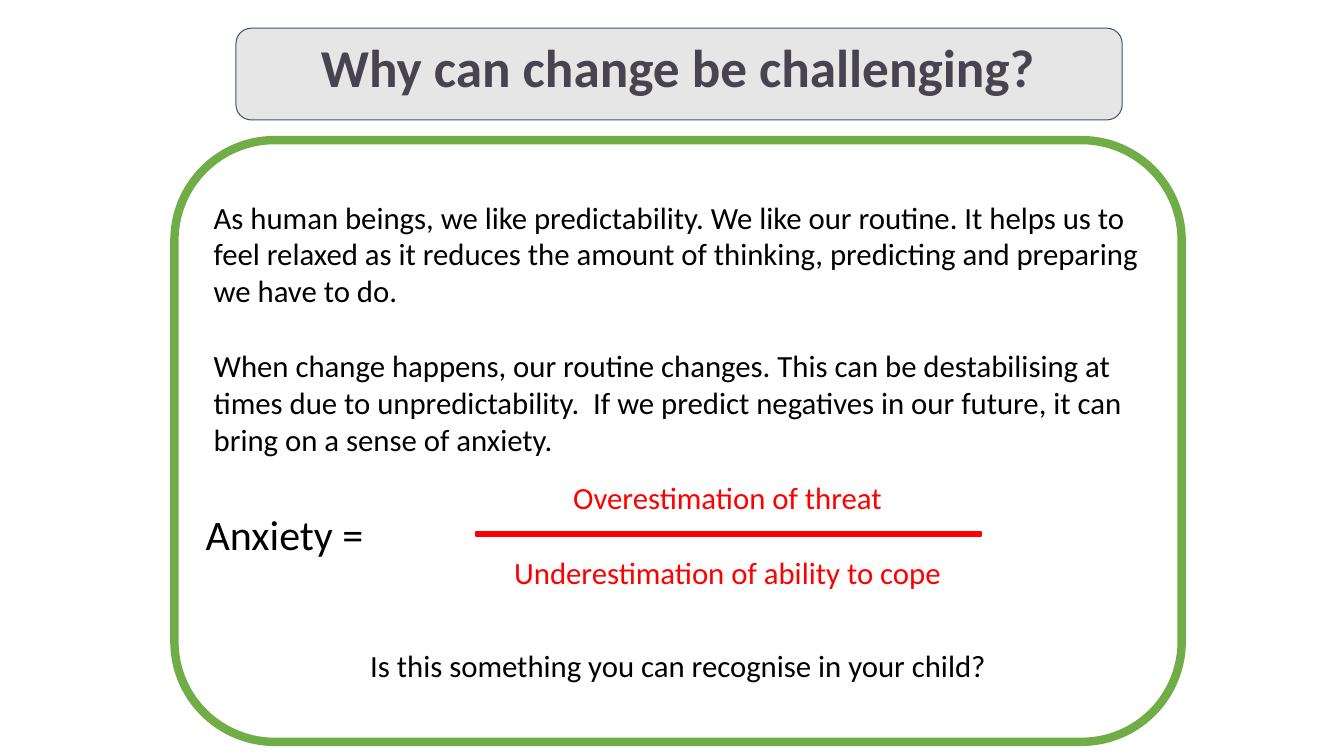
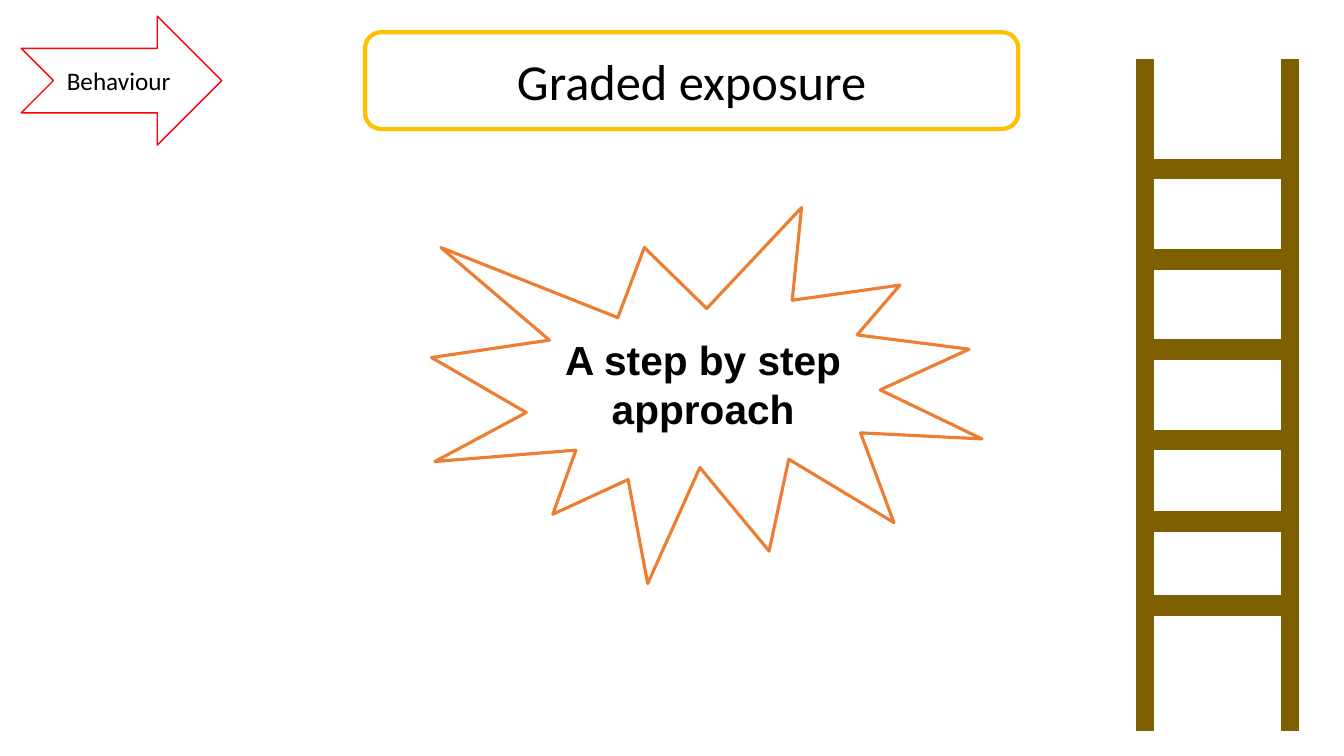
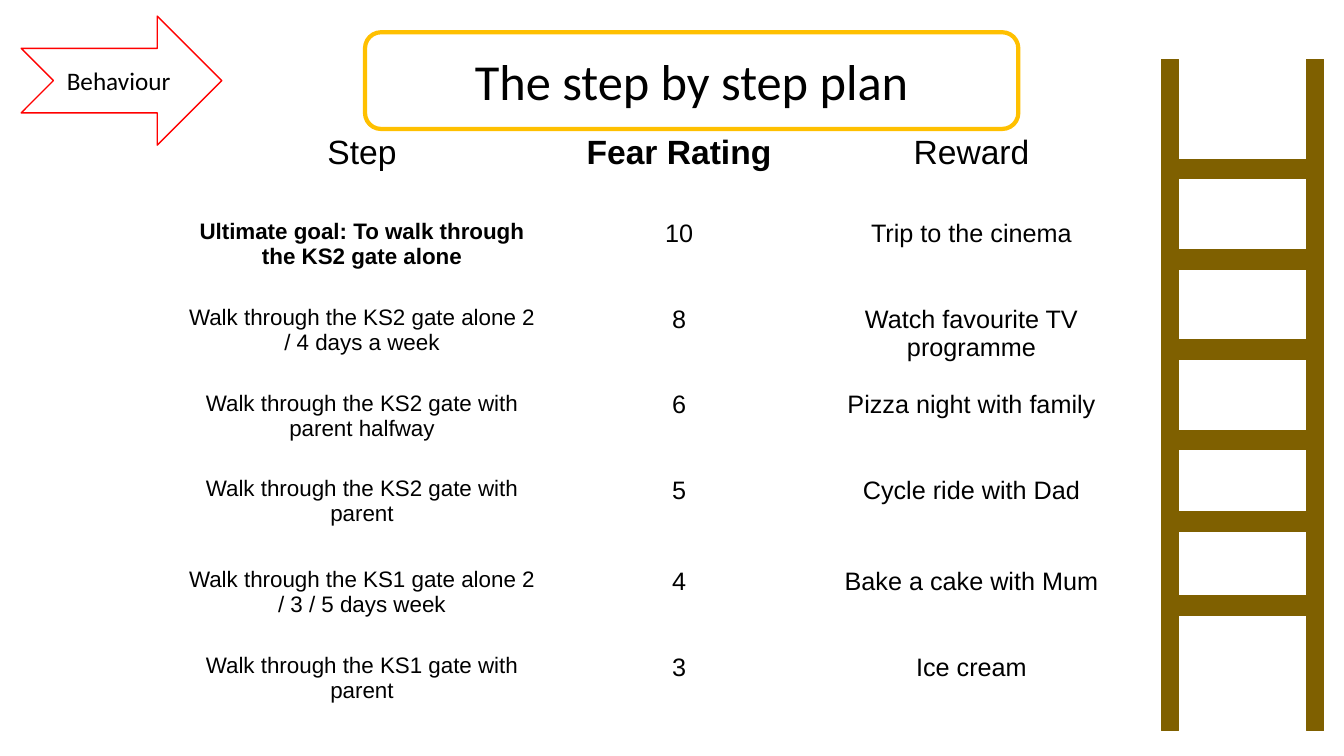
from dataclasses import dataclass
from typing import Optional

from pptx import Presentation
from pptx.dml.color import RGBColor
from pptx.enum.shapes import MSO_SHAPE
from pptx.enum.text import MSO_ANCHOR, MSO_AUTO_SIZE, PP_ALIGN
from pptx.util import Emu, Pt

PX = 9144
TITLE_ONLY = 5
BLACK, WHITE, RED = "000000", "FFFFFF", "FF0000"
SLATE, GREY, NAVY = "47434F", "E7E6E6", "44546A"
GREEN, AMBER, ORANGE, WOOD = "70AD47", "FFC000", "ED7D31", "7F6000"
BODY_FONT, PLAN_FONT = "Calibri", "Arial"
LINE_GAP = 27


@dataclass(frozen=True)
class Box:
    """A position and size in px."""
    left: int
    top: int
    width: int
    height: int

    def emu(self) -> tuple:
        """Return left, top, width and height in EMU."""
        return tuple(Emu(n * PX) for n in (self.left, self.top, self.width, self.height))


@dataclass(frozen=True)
class Style:
    """The look of a paragraph."""
    size: int
    font: str = BODY_FONT
    color: str = BLACK
    bold: bool = False
    align: PP_ALIGN = PP_ALIGN.CENTER
    spacing: Optional[float] = None


@dataclass(frozen=True)
class Para:
    """A paragraph with its style and the points of space before it."""
    text: str
    style: Style
    before: int = 0


@dataclass(frozen=True)
class Step:
    """One row of the plan."""
    step: str
    fear: str
    reward: str


TITLE_FRAME = Box(362, 32, 648, 96)
TITLE = Style(36)
QUESTION_TITLE = Style(38, color=SLATE, bold=True, spacing=0.9)
PROSE = Style(22, align=PP_ALIGN.LEFT)
PROMPT = Style(22)
FRACTION = Style(22, color=RED)

HEADINGS = Step("Step", "Fear Rating", "Reward")
STEPS = [
    Step("Ultimate goal: To walk through the KS2 gate alone", "10", "Trip to the cinema"),
    Step("Walk through the KS2 gate alone 2 / 4 days a week", "8", "Watch favourite TV programme"),
    Step("Walk through the KS2 gate with parent halfway", "6", "Pizza night with family"),
    Step("Walk through the KS2 gate with parent", "5", "Cycle ride with Dad"),
    Step("Walk through the KS1 gate alone 2 / 3 / 5 days week", "4", "Bake a cake with Mum"),
    Step("Walk through the KS1 gate with parent", "3", "Ice cream"),
]
COLUMN_WIDTHS = (364, 265, 315)
ROW_HEIGHTS = (85, 85, 85, 85, 90, 85, 85)
RUNG_TOPS = (158, 248, 337, 427, 508, 591)


def rgb(color: str) -> RGBColor:
    """Turn a hex string into a colour."""
    return RGBColor.from_string(color)


def write(tf, *paras: Para) -> None:
    """Write paragraphs into a text frame."""
    tf.word_wrap = True
    for i, para in enumerate(paras):
        p = tf.add_paragraph() if i else tf.paragraphs[0]
        p.alignment = para.style.align
        if para.before:
            p.space_before = Pt(para.before)
        if para.style.spacing:
            p.line_spacing = para.style.spacing
        r = p.add_run()
        r.text = para.text
        r.font.name = para.style.font
        r.font.size = Pt(para.style.size)
        r.font.bold = para.style.bold
        r.font.color.rgb = rgb(para.style.color)


def add_shape(shapes, kind: MSO_SHAPE, box: Box, fill: Optional[str], line: str, width: float):
    """Add a preset shape with its fill and outline."""
    sp = shapes.add_shape(kind, *box.emu())
    sp.shadow.inherit = False
    if fill:
        sp.fill.solid()
        sp.fill.fore_color.rgb = rgb(fill)
    else:
        sp.fill.background()
    sp.line.color.rgb = rgb(line)
    sp.line.width = Pt(width)
    sp.text_frame.vertical_anchor = MSO_ANCHOR.MIDDLE
    return sp


def add_text(s, box: Box, *paras: Para) -> None:
    """Add a wrapped text box."""
    write(s.shapes.add_textbox(*box.emu()).text_frame, *paras)


def place_title(s, box: Box, para: Para, anchor: MSO_ANCHOR) -> None:
    """Fill the title placeholder and bring it in front of its frame."""
    title = s.shapes.title
    title.left, title.top, title.width, title.height = box.emu()
    tf = title.text_frame
    tf.auto_size = MSO_AUTO_SIZE.NONE
    tf.vertical_anchor = anchor
    write(tf, para)
    s.shapes._spTree.append(title._element)


def add_behaviour_header(s, title: str) -> None:
    """Add the behaviour arrow and the framed title."""
    arrow = add_shape(s.shapes, MSO_SHAPE.NOTCHED_RIGHT_ARROW, Box(21, 16, 199, 128), WHITE, RED, 1)
    write(arrow.text_frame, Para("Behaviour ", Style(18)))
    add_shape(s.shapes, MSO_SHAPE.ROUNDED_RECTANGLE, TITLE_FRAME, WHITE, AMBER, 3)
    place_title(s, TITLE_FRAME, Para(title, TITLE), MSO_ANCHOR.MIDDLE)


def add_ladder(s, left: int) -> None:
    """Add a ladder of two rails and its rungs as one group."""
    rail, gap = 17, 127
    rails = [Box(x, 59, rail, 666) for x in (left, left + rail + gap)]
    rungs = [Box(left + rail, top, gap, 19) for top in RUNG_TOPS]
    ladder = s.shapes.add_group_shape()
    for box in rails + rungs:
        add_shape(ladder.shapes, MSO_SHAPE.RECTANGLE, box, WOOD, WOOD, 1)


def add_plan_table(s) -> None:
    """Add the table of steps, fear ratings and rewards."""
    rows = [HEADINGS, *STEPS]
    box = Box(177, 128, sum(COLUMN_WIDTHS), sum(ROW_HEIGHTS))
    table = s.shapes.add_table(len(rows), len(COLUMN_WIDTHS), *box.emu()).table
    for column, width in zip(table.columns, COLUMN_WIDTHS):
        column.width = Emu(width * PX)
    for i, (row, height) in enumerate(zip(rows, ROW_HEIGHTS)):
        table.rows[i].height = Emu(height * PX)
        for j, text in enumerate((row.step, row.fear, row.reward)):
            cell = table.cell(i, j)
            cell.fill.solid()
            cell.fill.fore_color.rgb = rgb(WHITE)
            size = 24 if i == 0 else 16 if j == 0 else 18
            bold = (i, j) in ((0, 1), (1, 0))
            write(cell.text_frame, Para(text, Style(size, PLAN_FONT, bold=bold)))


def build_question_slide(s) -> None:
    """Build the slide on why change is challenging."""
    add_shape(s.shapes, MSO_SHAPE.ROUNDED_RECTANGLE, Box(234, 28, 879, 91), GREY, NAVY, 0.75)
    place_title(s, Box(12, 36, 1321, 129), Para("Why can change be challenging?", QUESTION_TITLE),
                MSO_ANCHOR.TOP)
    panel = add_shape(s.shapes, MSO_SHAPE.ROUNDED_RECTANGLE, Box(173, 139, 999, 597), WHITE, GREEN, 6)
    write(
        panel.text_frame,
        Para("As human beings, we like predictability. We like our routine. It helps us to feel "
             "relaxed as it reduces the amount of thinking, predicting and preparing we have to do.",
             PROSE),
        Para("When change happens, our routine changes. This can be destabilising at times due to "
             "unpredictability.  If we predict negatives in our future, it can bring on a sense of "
             "anxiety.", PROSE, LINE_GAP),
        Para("Is this something you can recognise in your child?", PROMPT, 5 * LINE_GAP),
    )
    add_text(s, Box(452, 470, 539, 121),
             Para("Overestimation of threat", FRACTION),
             Para("Underestimation of ability to cope", FRACTION, LINE_GAP))
    add_shape(s.shapes, MSO_SHAPE.RECTANGLE, Box(472, 528, 501, 4), RED, RED, 1)
    add_text(s, Box(194, 500, 259, 61), Para("Anxiety =", Style(30, align=PP_ALIGN.LEFT)))


def build_exposure_slide(s) -> None:
    """Build the slide that introduces graded exposure."""
    add_ladder(s, 1127)
    burst = add_shape(s.shapes, MSO_SHAPE.EXPLOSION1, Box(428, 206, 546, 373), None, ORANGE, 2.25)
    tf = burst.text_frame
    tf.margin_top = tf.margin_bottom = Emu(10 * PX)
    write(tf, Para("A step by step approach", Style(29, PLAN_FONT, bold=True)))
    add_behaviour_header(s, "Graded exposure")


def build_plan_slide(s) -> None:
    """Build the slide with the step by step plan."""
    add_plan_table(s)
    add_behaviour_header(s, "The step by step plan")
    add_ladder(s, 1152)


def main() -> None:
    """Build and save the presentation."""
    prs = Presentation()
    prs.slide_width, prs.slide_height = Emu(1333 * PX), Emu(750 * PX)
    for build in (build_question_slide, build_exposure_slide, build_plan_slide):
        build(prs.slides.add_slide(prs.slide_layouts[TITLE_ONLY]))
    prs.save("out.pptx")


if __name__ == "__main__":
    main()
